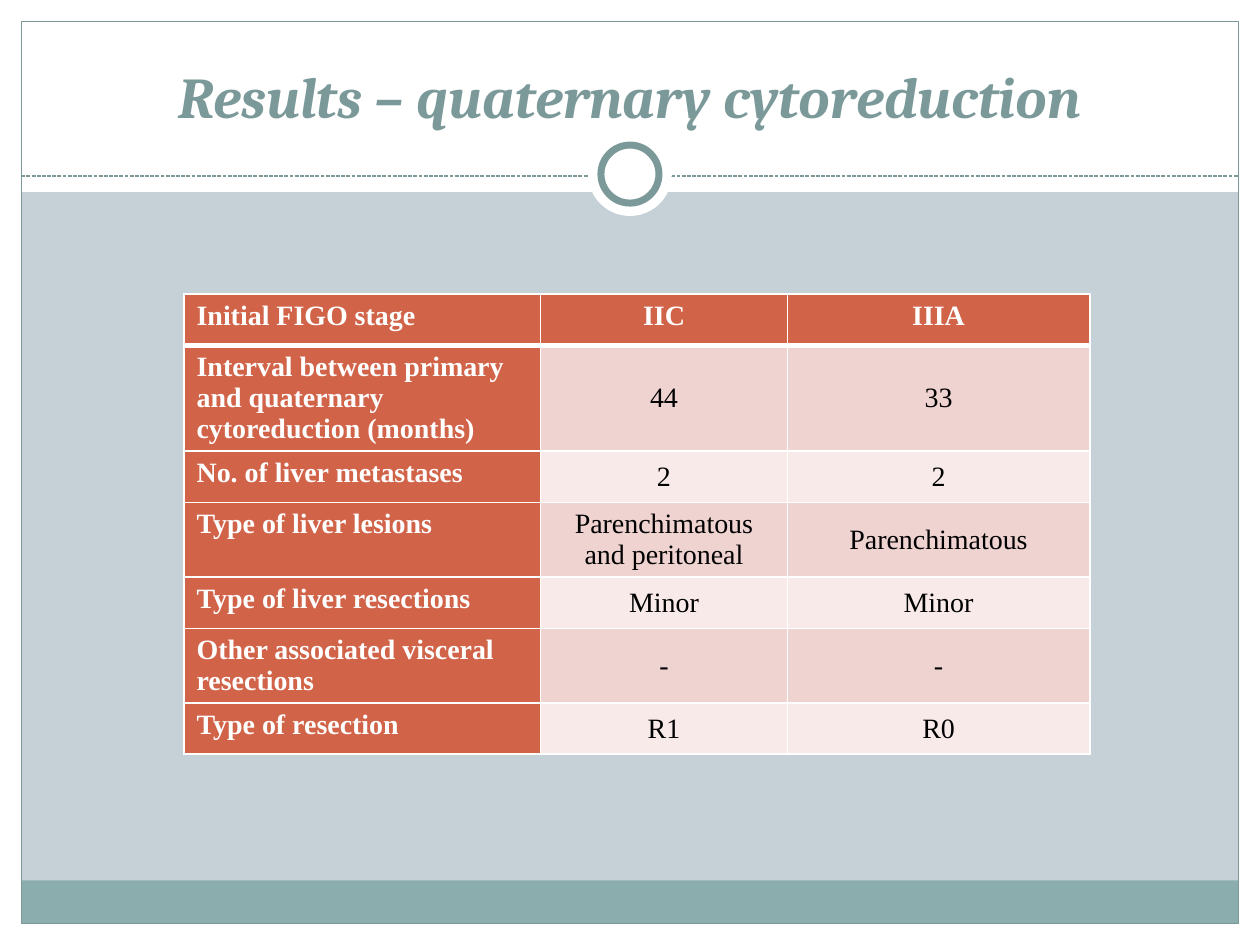
from dataclasses import dataclass

from lxml import etree
from pptx import Presentation
from pptx.dml.color import RGBColor
from pptx.enum.dml import MSO_LINE
from pptx.enum.shapes import MSO_CONNECTOR, MSO_SHAPE
from pptx.enum.text import MSO_ANCHOR, MSO_AUTO_SIZE, PP_ALIGN
from pptx.oxml.ns import qn
from pptx.slide import Slide
from pptx.util import Cm, Pt

RECT, OVAL = MSO_SHAPE.RECTANGLE, MSO_SHAPE.OVAL
STRAIGHT = MSO_CONNECTOR.STRAIGHT
DASH = MSO_LINE.SQUARE_DOT
LEFT, CENTER = PP_ALIGN.LEFT, PP_ALIGN.CENTER
TOP, MIDDLE, BOTTOM = MSO_ANCHOR.TOP, MSO_ANCHOR.MIDDLE, MSO_ANCHOR.BOTTOM
FIXED = MSO_AUTO_SIZE.NONE


@dataclass(frozen=True)
class Theme:
    ground: str = "C5D1D7"
    white: str = "FFFFFF"
    black: str = "000000"
    accent: str = "7C999A"
    foot: str = "8CADAE"
    head: str = "D16349"
    bands: tuple[str, str] = ("F7EAE9", "EED3D0")
    title_font: str = "Cambria"
    table_font: str = "Times New Roman"
    title_size: int = 33
    table_size: int = 16
    thin: float = 0.75
    ring: float = 4
    grid: float = 1
    rule: float = 3


@dataclass(frozen=True)
class Block:
    left: float
    top: float
    width: float
    height: float
    fill: str | None = None
    line: str | None = None
    weight: float = 0
    form: int = RECT


THEME = Theme()
WIDTH, HEIGHT, EDGE = 25.4, 19.05, 0.43
INNER = WIDTH - 2 * EDGE
MID = WIDTH / 2
RULE_Y = 3.55
RING_Y = 3.51
FOOT = 0.87


def disc(size: float, line: str | None = None, weight: float = 0) -> Block:
    return Block(MID - size / 2, RING_Y - size / 2, size, size,
                 THEME.white, line, weight, OVAL)


BACK = [
    Block(0, HEIGHT - EDGE, WIDTH, EDGE, THEME.white),
    Block(0, 0, WIDTH, 3.87, THEME.white),
    Block(0, 0, EDGE, HEIGHT, THEME.white),
    Block(WIDTH - EDGE, 0, EDGE, HEIGHT, THEME.white),
    Block(EDGE, HEIGHT - EDGE - FOOT, INNER, FOOT, THEME.foot),
    Block(EDGE, EDGE, INNER, HEIGHT - 2 * EDGE, None, THEME.accent, THEME.thin),
]
RING = [disc(1.69), disc(1.17, THEME.accent, THEME.ring)]

COLS = (7.19, 4.97, 6.1)
ROW = 1.03
ROWS = [
    ("Initial FIGO stage", "IIC", "IIIA"),
    ("Interval between primary and quaternary cytoreduction (months)", "44", "33"),
    ("No. of liver metastases", "2", "2"),
    ("Type of liver lesions", "Parenchimatous and peritoneal", "Parenchimatous"),
    ("Type of liver resections", "Minor", "Minor"),
    ("Other associated visceral resections", "-", "-"),
    ("Type of resection", "R1", "R0"),
]


def tint(code: str) -> RGBColor:
    return RGBColor.from_string(code)


def draw_block(slide: Slide, block: Block) -> None:
    shape = slide.shapes.add_shape(block.form, Cm(block.left), Cm(block.top),
                                   Cm(block.width), Cm(block.height))
    shape.shadow.inherit = False
    if block.fill:
        shape.fill.solid()
        shape.fill.fore_color.rgb = tint(block.fill)
    else:
        shape.fill.background()
    if block.line:
        shape.line.color.rgb = tint(block.line)
        shape.line.width = Pt(block.weight)
    else:
        shape.line.fill.background()


def draw_rule(slide: Slide) -> None:
    rule = slide.shapes.add_connector(STRAIGHT, Cm(EDGE), Cm(RULE_Y),
                                      Cm(WIDTH - EDGE), Cm(RULE_Y))
    rule.line.color.rgb = tint(THEME.accent)
    rule.line.width = Pt(THEME.thin)
    rule.line.dash_style = DASH
    etree.SubElement(rule.element.spPr, qn("a:effectLst"))


def draw_title(slide: Slide, text: str) -> None:
    title = slide.shapes.title
    title.left, title.top = Cm(0.85), Cm(0.64)
    title.width, title.height = Cm(23.7), Cm(2.1)
    frame = title.text_frame
    frame.text = text
    frame.word_wrap = True
    frame.auto_size = FIXED
    frame.vertical_anchor = BOTTOM
    line = frame.paragraphs[0]
    line.alignment = CENTER
    font = line.runs[0].font
    font.name, font.size = THEME.title_font, Pt(THEME.title_size)
    font.bold = font.italic = True
    font.color.rgb = tint(THEME.accent)
    title.element.getparent().append(title.element)


def edge_cell(cell, row: int) -> None:
    props = cell._tc.get_or_add_tcPr()
    for side in "LRTB":
        thick = (row, side) in ((0, "B"), (1, "T"))
        weight = THEME.rule if thick else THEME.grid
        line = etree.SubElement(props, qn(f"a:ln{side}"), w=str(Pt(weight)))
        fill = etree.SubElement(line, qn("a:solidFill"))
        etree.SubElement(fill, qn("a:srgbClr"), val=THEME.white)


def fill_cell(cell, text: str, row: int, col: int) -> None:
    label = row == 0 or col == 0
    edge_cell(cell, row)
    cell.fill.solid()
    cell.fill.fore_color.rgb = tint(THEME.head if label else THEME.bands[row % 2])
    cell.vertical_anchor = TOP if label else MIDDLE
    cell.text_frame.text = text
    line = cell.text_frame.paragraphs[0]
    line.alignment = CENTER if col else LEFT
    font = line.runs[0].font
    font.name, font.size = THEME.table_font, Pt(THEME.table_size)
    font.bold = label
    font.color.rgb = tint(THEME.white if label else THEME.black)


def draw_table(slide: Slide) -> None:
    table = slide.shapes.add_table(len(ROWS), len(COLS), Cm(3.71), Cm(5.93),
                                   Cm(sum(COLS)), Cm(ROW * len(ROWS))).table
    table.first_row = table.horz_banding = False
    for col, width in enumerate(COLS):
        table.columns[col].width = Cm(width)
    for row, texts in enumerate(ROWS):
        table.rows[row].height = Cm(ROW)
        for col, text in enumerate(texts):
            fill_cell(table.cell(row, col), text, row, col)


def main() -> None:
    deck = Presentation()
    deck.slide_width, deck.slide_height = Cm(WIDTH), Cm(HEIGHT)
    slide = deck.slides.add_slide(deck.slide_layouts[5])
    slide.background.fill.solid()
    slide.background.fill.fore_color.rgb = tint(THEME.ground)
    for block in BACK:
        draw_block(slide, block)
    draw_rule(slide)
    for block in RING:
        draw_block(slide, block)
    draw_title(slide, "Results – quaternary cytoreduction")
    draw_table(slide)
    deck.save("out.pptx")


if __name__ == "__main__":
    main()
